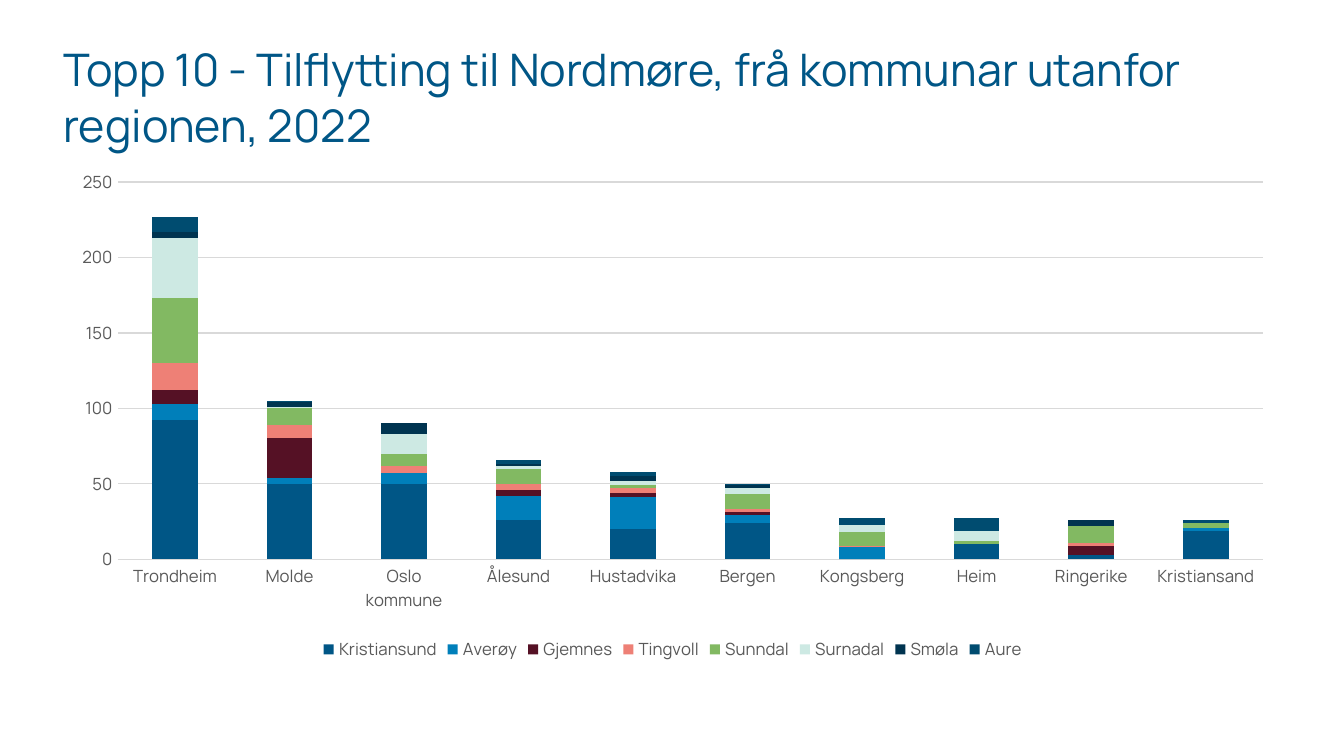
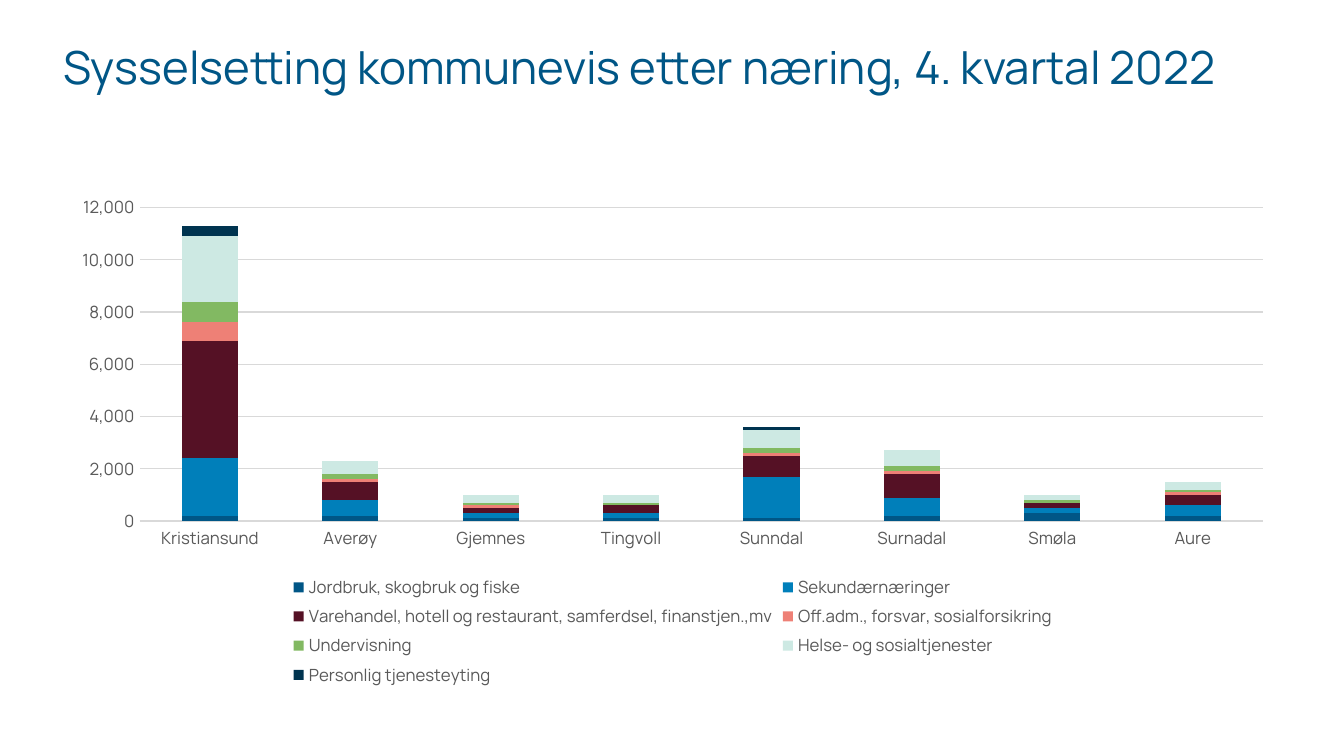
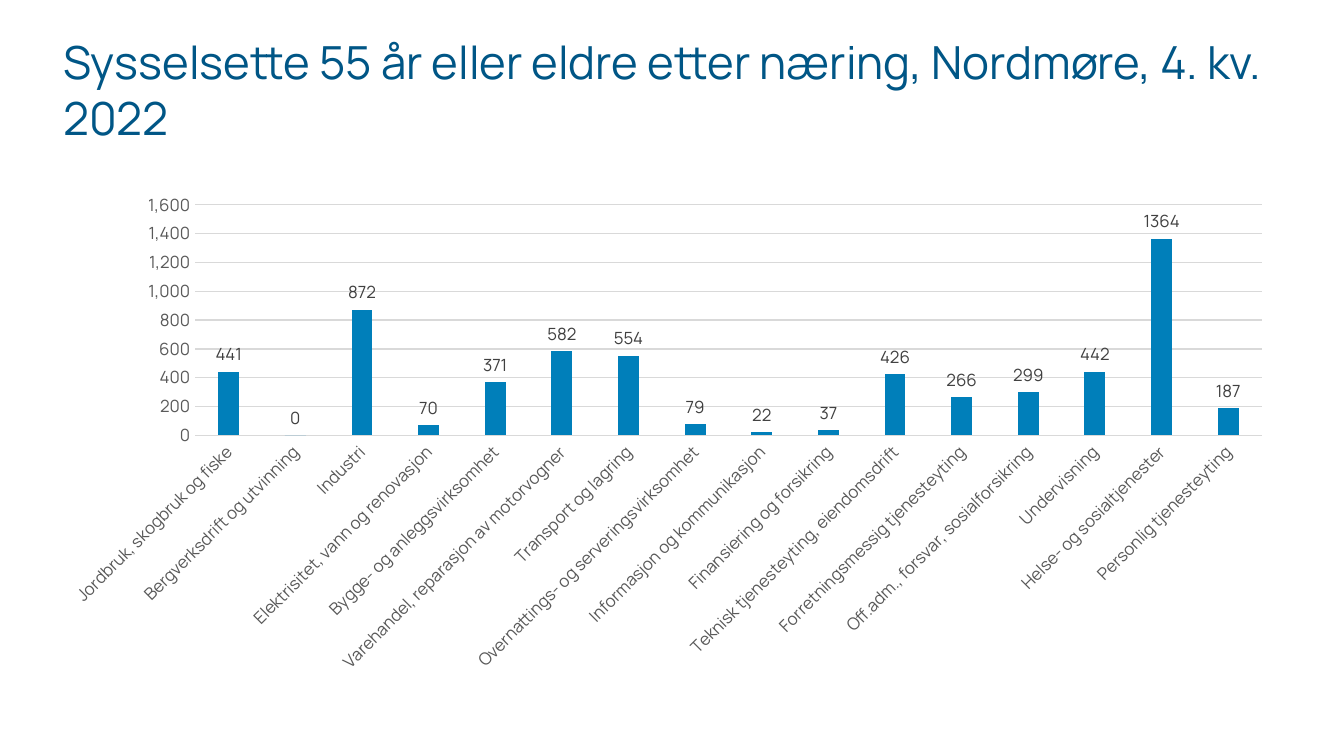
import pptx
import pptx.chart.data
import pptx.dml.color
import pptx.enum.chart
import pptx.enum.text
import pptx.oxml
import pptx.util
from pptx.dml.color import RGBColor
from pptx.util import Inches, Pt

# Shared look
FONT = "Manrope"
NAVY = RGBColor(0x00, 0x56, 0x86)
BLUE = RGBColor(0x00, 0x7F, 0xBA)
WINE = RGBColor(0x55, 0x11, 0x25)
CORAL = RGBColor(0xEE, 0x80, 0x76)
GREEN = RGBColor(0x82, 0xB9, 0x62)
MINT = RGBColor(0xCD, 0xE9, 0xE3)
MIDNIGHT = RGBColor(0x00, 0x34, 0x50)
PETROL = RGBColor(0x00, 0x4C, 0x70)
STACK_COLORS = [NAVY, BLUE, WINE, CORAL, GREEN, MINT, MIDNIGHT, PETROL]
BLACK = RGBColor(0x00, 0x00, 0x00)
WHITE = RGBColor(0xFF, 0xFF, 0xFF)
AXIS_GREY = RGBColor(0x59, 0x59, 0x59)
GRID_GREY = RGBColor(0xD9, 0xD9, 0xD9)
LABEL_GREY = RGBColor(0x40, 0x40, 0x40)

STACKED = pptx.enum.chart.XL_CHART_TYPE.COLUMN_STACKED
CLUSTERED = pptx.enum.chart.XL_CHART_TYPE.COLUMN_CLUSTERED
NO_TICK = pptx.enum.chart.XL_TICK_MARK.NONE


def style_font(font, size, color):
    font.name = FONT
    font.size = Pt(size)
    font.color.rgb = color


# Content of the three slides
migration = {
    "title": "Topp 10 - Tilflytting til Nordmøre, frå kommunar utanfor regionen, 2022",
    "title_size": 24, "title_top": 0.28,
    "type": STACKED, "left": 0.43, "top": 1.19, "height": 3.77,
    "gap": 150, "overlap": 100, "format": "0", "maximum": 250, "step": 50,
    "colors": STACK_COLORS,
    "categories": ["Trondheim", "Molde", "Oslo kommune", "Ålesund", "Hustadvika",
                   "Bergen", "Kongsberg", "Heim", "Ringerike", "Kristiansand"],
    "series": {
        "Kristiansund": [92, 50, 50, 26, 20, 24, 0, 10, 3, 19],
        "Averøy": [11, 4, 7, 16, 21, 5, 8, 0, 0, 2],
        "Gjemnes": [9, 26, 0, 4, 3, 2, 0, 0, 6, 0],
        "Tingvoll": [18, 9, 5, 4, 3, 2, 1, 0, 2, 0],
        "Sunndal": [43, 11, 8, 10, 2, 10, 9, 2, 11, 3],
        "Surnadal": [40, 1, 13, 2, 3, 4, 5, 7, 0, 0],
        "Smøla": [4, 3, 7, 1, 3, 2, 0, 0, 4, 0],
        "Aure": [10, 1, 0, 3, 3, 1, 4, 8, 0, 2],
    },
}
employment = {
    "title": "Sysselsetting kommunevis etter næring, 4. kvartal 2022",
    "title_size": 24.4, "title_top": 0.26,
    "type": STACKED, "left": 0.43, "top": 1.38, "height": 3.77,
    "gap": 150, "overlap": 100, "format": "#,##0", "maximum": 12000, "step": 2000,
    "colors": STACK_COLORS,
    "categories": ["Kristiansund", "Averøy", "Gjemnes", "Tingvoll",
                   "Sunndal", "Surnadal", "Smøla", "Aure"],
    "series": {
        "Jordbruk, skogbruk og fiske": [200, 200, 100, 100, 100, 200, 300, 200],
        "Sekundærnæringer": [2200, 600, 200, 200, 1600, 700, 200, 400],
        "Varehandel, hotell og restaurant, samferdsel, finanstjen.,mv":
            [4500, 700, 200, 300, 800, 900, 200, 400],
        "Off.adm., forsvar, sosialforsikring": [700, 100, 100, 0, 100, 100, 0, 100],
        "Undervisning": [800, 200, 100, 100, 200, 200, 100, 100],
        "Helse- og sosialtjenester": [2500, 500, 300, 300, 700, 600, 200, 300],
        "Personlig tjenesteyting": [400, 0, 0, 0, 100, 0, 0, 0],
    },
}
seniors = {
    "title": "Sysselsette 55 år eller eldre etter næring, Nordmøre, 4. kv. 2022",
    "title_size": 24.4, "title_top": 0.22,
    "type": CLUSTERED, "left": 0.42, "top": 1.32, "height": 3.78,
    "gap": 219, "overlap": -27, "format": "#,##0", "maximum": 1600, "step": 200,
    "colors": [BLUE],
    "categories": ["Jordbruk, skogbruk og fiske", "Bergverksdrift og utvinning", "Industri",
                   "Elektrisitet, vann og renovasjon", "Bygge- og anleggsvirksomhet",
                   "Varehandel, reparasjon av motorvogner", "Transport og lagring",
                   "Overnattings- og serveringsvirksomhet", "Informasjon og kommunikasjon",
                   "Finansiering og forsikring", "Teknisk tjenesteyting, eiendomsdrift",
                   "Forretningsmessig tjenesteyting", "Off.adm., forsvar, sosialforsikring",
                   "Undervisning", "Helse- og sosialtjenester", "Personlig tjenesteyting"],
    "series": {"Series 1": [441, 0, 872, 70, 371, 582, 554, 79, 22, 37,
                            426, 266, 299, 442, 1364, 187]},
}

# Widescreen 16:9
presentation = pptx.Presentation()
presentation.slide_width = Inches(10)
presentation.slide_height = Inches(10 * 9 / 16)
title_only = presentation.slide_layouts[5]

for topic in (migration, employment, seniors):
    slide = presentation.slides.add_slide(title_only)
    slide.background.fill.solid()
    slide.background.fill.fore_color.rgb = WHITE

    # Title
    heading = slide.shapes.title
    heading.left, heading.top = Inches(0.43), Inches(topic["title_top"])
    heading.width, heading.height = Inches(9.15), Inches(0.45)
    frame = heading.text_frame
    frame.text = topic["title"]
    frame.word_wrap = True
    frame.auto_size = pptx.enum.text.MSO_AUTO_SIZE.NONE
    frame.vertical_anchor = pptx.enum.text.MSO_ANCHOR.TOP
    frame.margin_left = frame.margin_right = Inches(0.04)
    frame.margin_top = frame.margin_bottom = Inches(0.02)
    paragraph = frame.paragraphs[0]
    paragraph.alignment = pptx.enum.text.PP_ALIGN.LEFT
    paragraph.line_spacing = 1.03
    style_font(paragraph.font, topic["title_size"], NAVY)

    # Column chart
    figures = pptx.chart.data.CategoryChartData(number_format="General")
    figures.categories = topic["categories"]
    for name, values in topic["series"].items():
        figures.add_series(name, values)
    chart = slide.shapes.add_chart(
        topic["type"], Inches(topic["left"]), Inches(topic["top"]),
        Inches(9.15), Inches(topic["height"]), figures).chart
    style_font(chart.font, 10, BLACK)
    chart.has_title = False
    columns = chart.plots[0]
    columns.gap_width = topic["gap"]
    columns.overlap = topic["overlap"]
    columns.vary_by_categories = False
    for series, color in zip(columns.series, topic["colors"]):
        series.format.fill.solid()
        series.format.fill.fore_color.rgb = color
        series.invert_if_negative = False

    # Axes
    for axis in (chart.category_axis, chart.value_axis):
        axis.major_tick_mark = axis.minor_tick_mark = NO_TICK
        style_font(axis.tick_labels.font, 9, AXIS_GREY)
    value_axis = chart.value_axis
    value_axis.minimum_scale = 0
    value_axis.maximum_scale = topic["maximum"]
    value_axis.major_unit = topic["step"]
    value_axis.tick_labels.number_format = topic["format"]
    value_axis.tick_labels.number_format_is_linked = False
    value_axis.format.line.fill.background()
    for line in (chart.category_axis.format.line, value_axis.major_gridlines.format.line):
        line.color.rgb = GRID_GREY
        line.width = Pt(0.75)

    # Legend for stacked columns only
    chart.has_legend = topic["type"] == STACKED
    if chart.has_legend:
        chart.legend.position = pptx.enum.chart.XL_LEGEND_POSITION.BOTTOM
        chart.legend.include_in_layout = False
        style_font(chart.legend.font, 9, AXIS_GREY)

# Value labels on the last chart
labels = columns.series[0].data_labels
labels.show_value = True
labels.number_format = "General"
labels.number_format_is_linked = False
labels.position = pptx.enum.chart.XL_LABEL_POSITION.OUTSIDE_END
style_font(labels.font, 9, LABEL_GREY)

# Slanted category names and fixed plot area on the last chart
for body in chart.category_axis._element.xpath("c:txPr/a:bodyPr"):
    body.set("rot", "-2700000")
    body.set("vert", "horz")
plot_area = chart._chartSpace.xpath("c:chart/c:plotArea")[0]
for layout in plot_area.xpath("c:layout"):
    plot_area.remove(layout)
plot_area.insert(0, pptx.oxml.parse_xml(
    '<c:layout xmlns:c="http://schemas.openxmlformats.org/drawingml/2006/chart">'
    '<c:manualLayout><c:layoutTarget val="inner"/>'
    '<c:xMode val="edge"/><c:yMode val="edge"/>'
    '<c:x val="0.113"/><c:y val="0.054"/><c:w val="0.867"/><c:h val="0.454"/>'
    '</c:manualLayout></c:layout>'))

presentation.save("out.pptx")
